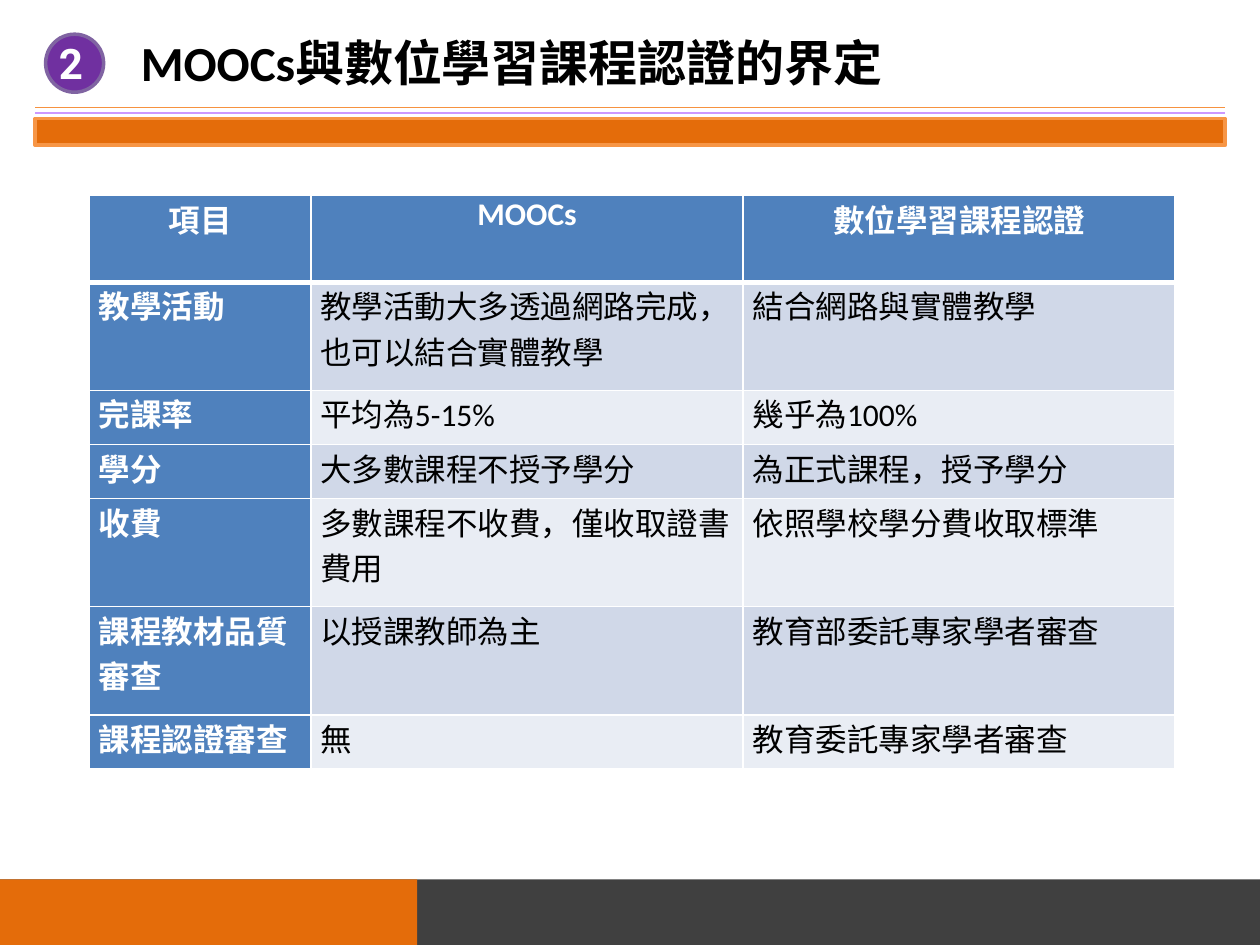
import pptx
import pptx.dml.color
import pptx.enum.shapes
import pptx.enum.text
import pptx.oxml
import pptx.oxml.ns
import pptx.util
from pptx.util import Cm, Pt

RGBColor = pptx.dml.color.RGBColor
MSO_SHAPE = pptx.enum.shapes.MSO_SHAPE
PP_ALIGN = pptx.enum.text.PP_ALIGN

WHITE = RGBColor(0xFF, 0xFF, 0xFF)
BLACK = RGBColor(0, 0, 0)
CHARCOAL = RGBColor(0x40, 0x40, 0x40)
ORANGE = RGBColor(0xE4, 0x6C, 0x0A)
LIGHT_ORANGE = RGBColor(0xF7, 0x96, 0x46)
RULE_ORANGE = RGBColor(0xF6, 0x92, 0x40)
RULE_LILAC = RGBColor(0xCC, 0x99, 0xFF)
PURPLE = RGBColor(0x70, 0x30, 0xA0)
PURPLE_EDGE = RGBColor(0x80, 0x64, 0xA2)
BLUE = RGBColor(0x4F, 0x81, 0xBD)
BANDS = (RGBColor(0xE9, 0xED, 0xF4), RGBColor(0xD0, 0xD8, 0xE8))

ROWS = [
    ("項目", "MOOCs", "數位學習課程認證"),
    ("教學活動", "教學活動大多透過網路完成，也可以結合實體教學", "結合網路與實體教學"),
    ("完課率", "平均為5-15%", "幾乎為100%"),
    ("學分", "大多數課程不授予學分", "為正式課程，授予學分"),
    ("收費", "多數課程不收費，僅收取證書費用", "依照學校學分費收取標準"),
    ("課程教材品質審查", "以授課教師為主", "教育部委託專家學者審查"),
    ("課程認證審查", "無", "教育委託專家學者審查"),
]
COL_WIDTHS = (4.47, 8.71, 8.71)
ROW_HEIGHTS = (1.75, 2.18, 1.09, 1.09, 2.18, 2.18, 1.09)


def add_filled(s, kind, box, fill, edge=None):
    """Add a preset shape with a plain fill and an optional 2 pt edge."""
    sp = s.shapes.add_shape(kind, *map(Cm, box))
    sp.shadow.inherit = False
    sp.fill.solid()
    sp.fill.fore_color.rgb = fill
    if edge is None:
        sp.line.fill.background()
    else:
        sp.line.color.rgb = edge
        sp.line.width = Pt(2)


def add_rule(s, y, color, width):
    """Add a horizontal rule below the heading."""
    line = s.shapes.add_connector(
        pptx.enum.shapes.MSO_CONNECTOR.STRAIGHT, Cm(0.71), Cm(y), Cm(24.69), Cm(y))
    line.line.color.rgb = color
    line.line.width = Pt(width)
    line._element.spPr.append(pptx.oxml.parse_xml(
        f'<a:effectLst {pptx.oxml.ns.nsdecls("a")}/>'))


def set_text(tf, text, name, size, color, bold):
    """Write one paragraph in a single font."""
    p = tf.paragraphs[0]
    p.text = text
    p.font.name = name
    p.font.size = Pt(size)
    p.font.bold = bold
    p.font.color.rgb = color
    return p


def add_text(s, box, text, name, size, color, wrap):
    """Add a bold text box that grows with its text."""
    tf = s.shapes.add_textbox(*map(Cm, box)).text_frame
    tf.word_wrap = wrap
    tf.auto_size = pptx.enum.text.MSO_AUTO_SIZE.SHAPE_TO_FIT_TEXT
    set_text(tf, text, name, size, color, True)


def set_borders(cell, top, bottom):
    """Give a cell white borders, 1 pt at the sides."""
    tcPr = cell._tc.get_or_add_tcPr()
    for side, width in (("L", 1), ("R", 1), ("T", top), ("B", bottom)):
        tcPr.append(pptx.oxml.parse_xml(
            f'<a:ln{side} {pptx.oxml.ns.nsdecls("a")} w="{Pt(width)}">'
            f'<a:solidFill><a:srgbClr val="{WHITE}"/></a:solidFill></a:ln{side}>'))


def fill_cell(cell, text, row, col):
    """Write and style one cell by its place in the table."""
    heading = row == 0 or col == 0
    cell.margin_left = cell.margin_right = Cm(0.19)
    cell.margin_top = cell.margin_bottom = 0
    p = set_text(cell.text_frame, text, "Calibri", 18,
                 WHITE if heading else BLACK, heading)
    if row == 0:
        p.alignment = PP_ALIGN.CENTER
    set_borders(cell, 3 if row == 1 else 1, 3 if row == 0 else 1)
    cell.fill.solid()
    cell.fill.fore_color.rgb = BLUE if heading else BANDS[row % 2]


def add_comparison(s):
    """Add the table comparing the two kinds of course."""
    table = s.shapes.add_table(
        len(ROWS), len(COL_WIDTHS), Cm(1.8), Cm(3.94),
        Cm(sum(COL_WIDTHS)), Cm(sum(ROW_HEIGHTS))).table
    for column, width in zip(table.columns, COL_WIDTHS):
        column.width = Cm(width)
    for i, (height, texts) in enumerate(zip(ROW_HEIGHTS, ROWS)):
        table.rows[i].height = Cm(height)
        for j, text in enumerate(texts):
            fill_cell(table.cell(i, j), text, i, j)


def main():
    """Build the slide and save it."""
    prs = pptx.Presentation()
    prs.slide_width, prs.slide_height = Cm(25.4), Cm(19.05)
    s = prs.slides.add_slide(prs.slide_layouts[6])
    add_filled(s, MSO_SHAPE.RECTANGLE, (0, 17.73, 25.4, 1.32), CHARCOAL)
    add_filled(s, MSO_SHAPE.RECTANGLE, (0, 17.73, 8.41, 1.32), ORANGE)
    add_filled(s, MSO_SHAPE.RECTANGLE, (0.71, 2.39, 23.99, 0.54), ORANGE, LIGHT_ORANGE)
    add_rule(s, 2.28, RULE_LILAC, 1.5)
    add_rule(s, 2.16, RULE_ORANGE, 0.75)
    add_text(s, (2.59, 0.53, 16.92, 1.45), "MOOCs與數位學習課程認證的界定",
             "Calibri", 28, BLACK, True)
    add_filled(s, MSO_SHAPE.OVAL, (0.92, 0.69, 1.17, 1.17), PURPLE, PURPLE_EDGE)
    add_comparison(s)
    add_text(s, (0.94, 0.64, 1.12, 1.28), "2", "Roboto", 24, WHITE, False)
    prs.save("out.pptx")


if __name__ == "__main__":
    main()
